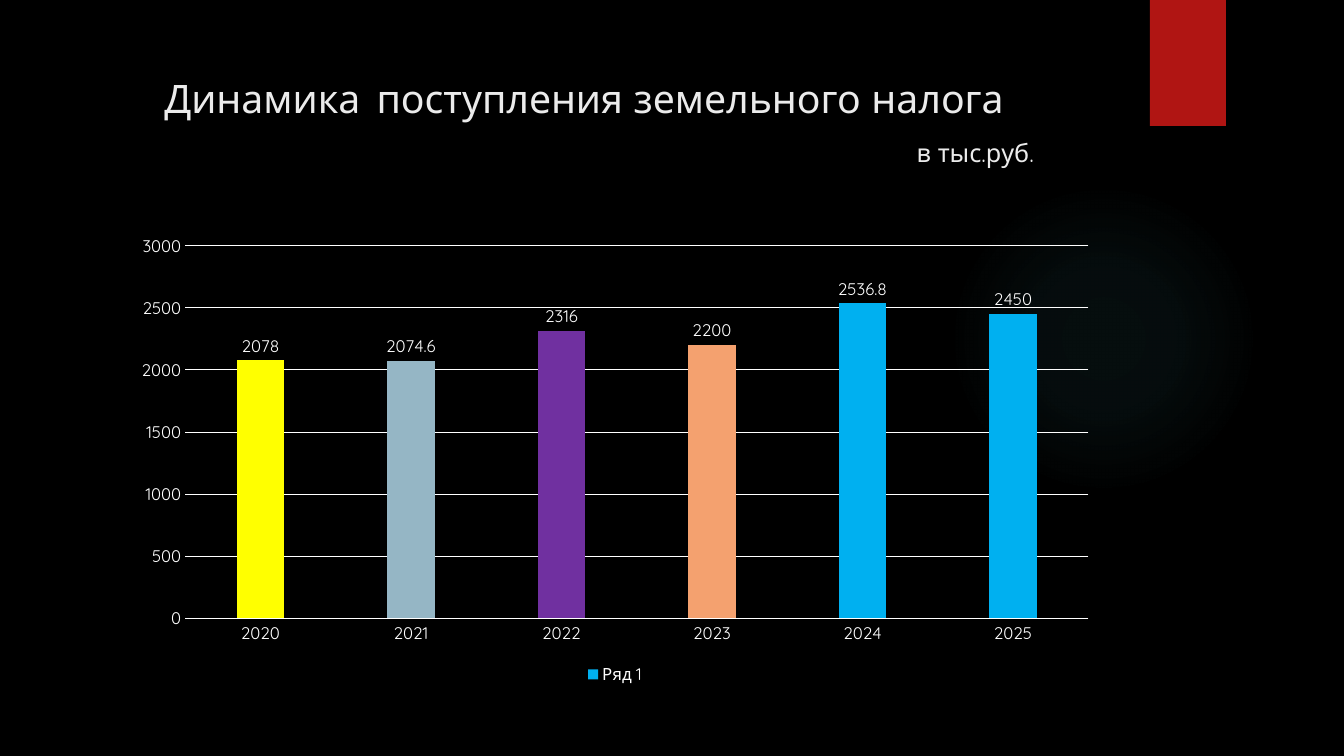
from dataclasses import dataclass

from lxml.etree import SubElement
from pptx import Presentation
from pptx.chart.data import CategoryChartData
from pptx.dml.color import RGBColor
from pptx.enum.chart import XL_CHART_TYPE, XL_LABEL_POSITION, XL_LEGEND_POSITION, XL_TICK_MARK
from pptx.enum.shapes import MSO_SHAPE
from pptx.enum.text import PP_ALIGN
from pptx.oxml.ns import qn
from pptx.util import Emu, Pt

EMU_PER_PX = 914400 / 100.8
FONT = "Quicksand"

BLACK = RGBColor(0x00, 0x00, 0x00)
WHITE = RGBColor(0xFF, 0xFF, 0xFF)
TITLE_GREY = RGBColor(0xEB, 0xEB, 0xEB)
RIBBON_RED = RGBColor(0xB0, 0x15, 0x13)
GLOW_TEAL = RGBColor(0x50, 0xB9, 0xC1)
YELLOW = RGBColor(0xFF, 0xFF, 0x00)
GREY_BLUE = RGBColor(0x95, 0xB6, 0xC5)
PURPLE = RGBColor(0x70, 0x30, 0xA0)
PEACH = RGBColor(0xF4, 0xA1, 0x6F)
SKY_BLUE = RGBColor(0x00, 0xB0, 0xF0)


@dataclass(frozen=True)
class Box:
    left: int
    top: int
    width: int
    height: int

    def emu(self) -> tuple[Emu, ...]:
        return tuple(map(px, (self.left, self.top, self.width, self.height)))


@dataclass(frozen=True)
class Run:
    text: str
    size: int


@dataclass(frozen=True)
class Line:
    box: Box
    align: PP_ALIGN
    runs: tuple[Run, ...]


@dataclass(frozen=True)
class TaxYear:
    year: str
    receipts: float
    color: RGBColor


TITLE_LINES = (
    Line(Box(72, 55, 1024, 74), PP_ALIGN.CENTER,
         (Run("Динамика", 28), Run(" ", 42), Run("поступления земельного налога", 28))),
    Line(Box(834, 137, 200, 40), PP_ALIGN.RIGHT, (Run("в тыс.руб.", 18),)),
)
TAX_YEARS = (
    TaxYear("2020", 2078, YELLOW),
    TaxYear("2021", 2074.6, GREY_BLUE),
    TaxYear("2022", 2316, PURPLE),
    TaxYear("2023", 2200, PEACH),
    TaxYear("2024", 2536.8, SKY_BLUE),
    TaxYear("2025", 2450, SKY_BLUE),
)


def px(length: int) -> Emu:
    return Emu(round(length * EMU_PER_PX))


def style_font(font, size: int, color: RGBColor) -> None:
    font.name = FONT
    font.size = Pt(size)
    font.color.rgb = color


def add_plain_shape(slide, kind: MSO_SHAPE, box: Box, color: RGBColor):
    shape = slide.shapes.add_shape(kind, *box.emu())
    shape.shadow.inherit = False
    shape.fill.solid()
    shape.fill.fore_color.rgb = color
    shape.line.fill.background()
    return shape


def add_glow(slide, box: Box) -> None:
    """Draw a disc that fades from its centre to nothing."""
    glow = add_plain_shape(slide, MSO_SHAPE.OVAL, box, GLOW_TEAL)
    glow.fill.gradient()
    gradient = glow.fill._fill._gradFill
    for child in list(gradient):
        gradient.remove(child)
    stops = SubElement(gradient, qn("a:gsLst"))
    for position, alpha in ((0, 7), (36, 6), (69, 0), (100, 0)):
        stop = SubElement(stops, qn("a:gs"), pos=str(position * 1000))
        color = SubElement(stop, qn("a:srgbClr"), val=str(GLOW_TEAL))
        SubElement(color, qn("a:alpha"), val=str(alpha * 1000))
    circle = SubElement(gradient, qn("a:path"), path="circle")
    SubElement(circle, qn("a:fillToRect"), l="50000", t="50000", r="50000", b="50000")


def add_line(slide, line: Line) -> None:
    frame = slide.shapes.add_textbox(*line.box.emu()).text_frame
    frame.word_wrap = True
    frame.margin_left = frame.margin_right = frame.margin_top = frame.margin_bottom = 0
    paragraph = frame.paragraphs[0]
    paragraph.alignment = line.align
    for part in line.runs:
        run = paragraph.add_run()
        run.text = part.text
        style_font(run.font, part.size, TITLE_GREY)


def add_receipts_chart(slide, box: Box) -> None:
    data = CategoryChartData()
    data.categories = [item.year for item in TAX_YEARS]
    data.add_series("Ряд 1", [item.receipts for item in TAX_YEARS])
    chart = slide.shapes.add_chart(XL_CHART_TYPE.COLUMN_CLUSTERED, *box.emu(), data).chart
    style_font(chart.font, 12, WHITE)
    chart.has_title = False
    chart.has_legend = True
    chart.legend.position = XL_LEGEND_POSITION.BOTTOM
    chart.legend.include_in_layout = False
    style_font(chart.legend.font, 12, WHITE)

    years, amounts = chart.category_axis, chart.value_axis
    for axis in (years, amounts):
        axis.major_tick_mark = axis.minor_tick_mark = XL_TICK_MARK.NONE
        style_font(axis.tick_labels.font, 12, WHITE)
    amounts.minimum_scale, amounts.maximum_scale, amounts.major_unit = 0, 3000, 500
    amounts.format.line.fill.background()
    for line in (years.format.line, amounts.major_gridlines.format.line):
        line.color.rgb = WHITE
        line.width = Pt(0.75)

    plot = chart.plots[0]
    plot.gap_width, plot.overlap = 219, -27
    plot.vary_by_categories = False
    series = plot.series[0]
    series.format.fill.solid()
    series.format.fill.fore_color.rgb = SKY_BLUE
    for index, item in enumerate(TAX_YEARS):
        if item.color != SKY_BLUE:
            fill = series.points[index].format.fill
            fill.solid()
            fill.fore_color.rgb = item.color
    labels = series.data_labels
    labels.show_value = True
    labels.position = XL_LABEL_POSITION.OUTSIDE_END
    style_font(labels.font, 12, WHITE)


def main() -> None:
    deck = Presentation()
    deck.slide_width, deck.slide_height = px(1344), px(756)
    slide = deck.slides.add_slide(deck.slide_layouts[6])
    slide.background.fill.solid()
    slide.background.fill.fore_color.rgb = BLACK
    add_glow(slide, Box(949, 184, 310, 310))
    add_plain_shape(slide, MSO_SHAPE.RECTANGLE, Box(1150, 0, 76, 126), RIBBON_RED)
    for line in TITLE_LINES:
        add_line(slide, line)
    add_receipts_chart(slide, Box(122, 226, 986, 463))
    deck.save("out.pptx")


if __name__ == "__main__":
    main()
